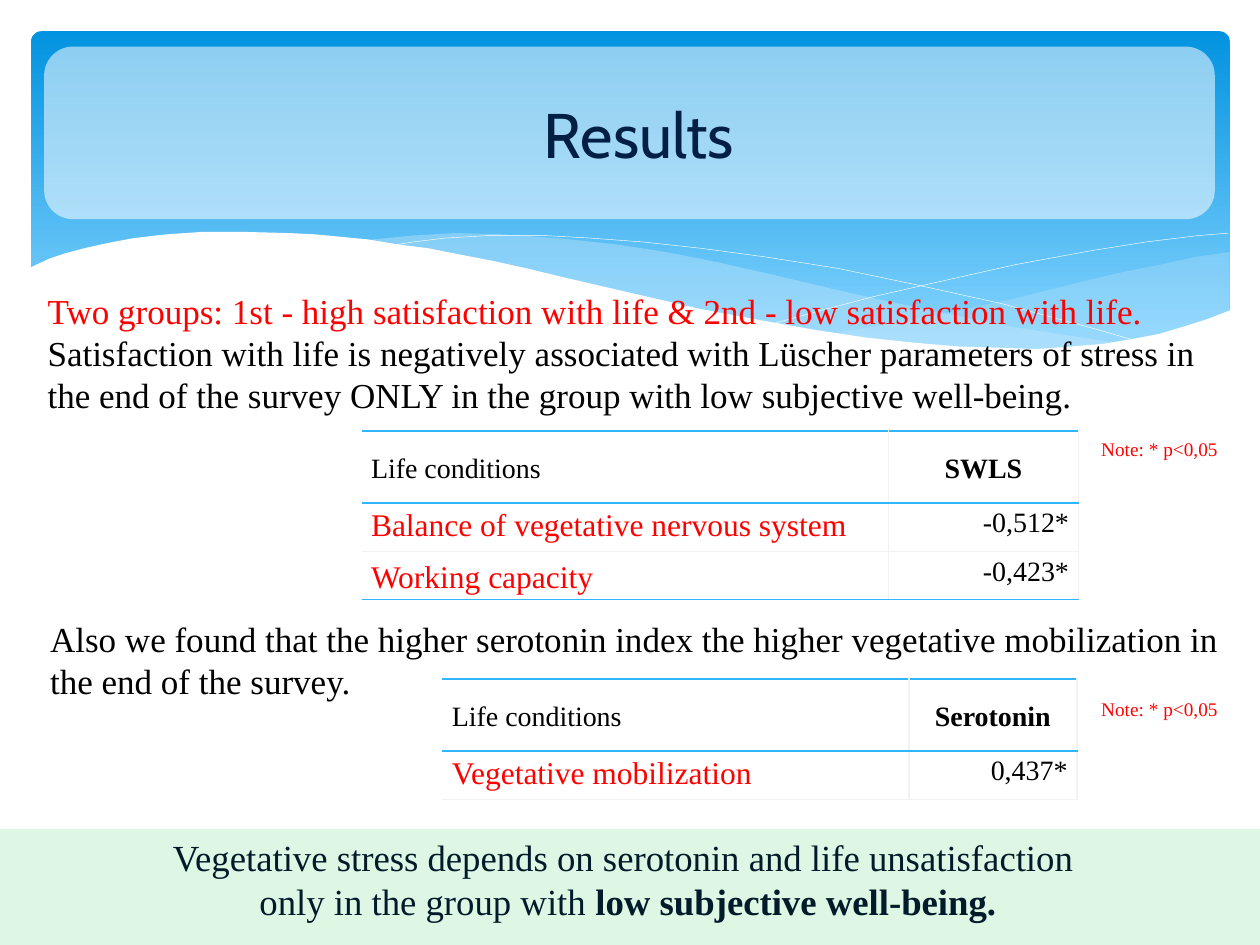
from lxml import etree
from pptx import Presentation
from pptx.dml.color import RGBColor
from pptx.enum import shapes, text
from pptx.oxml import ns
from pptx.util import Cm, Pt

WHITE = RGBColor(0xFF, 0xFF, 0xFF)
BLACK = RGBColor(0x00, 0x00, 0x00)
RED = RGBColor(0xFF, 0x00, 0x00)
NAVY = RGBColor(0x04, 0x1F, 0x44)
INK = RGBColor(0x02, 0x1B, 0x2B)
SKY = RGBColor(0x02, 0x93, 0xE0)
PALE_SKY = RGBColor(0x83, 0xD3, 0xFE)
MIST = RGBColor(0xC6, 0xE7, 0xFC)
MINT = RGBColor(0xDE, 0xF6, 0xE4)
BLUE = RGBColor(0x31, 0xB6, 0xFD)
GREY = RGBColor(0xF2, 0xF2, 0xF2)
SERIF = "Times New Roman"
LEFT, CENTER = text.PP_ALIGN.LEFT, text.PP_ALIGN.CENTER
RIGHT, JUSTIFY = text.PP_ALIGN.RIGHT, text.PP_ALIGN.JUSTIFY
MIDDLE, TOP = text.MSO_ANCHOR.MIDDLE, text.MSO_ANCHOR.TOP


def write(p, content, size=20, color=BLACK, bold=False, font=SERIF, align=LEFT):
    """Append content to a paragraph; a newline becomes a line break."""
    p.alignment = align
    for i, line in enumerate(content.split("\n")):
        if i:
            p.add_line_break()
        r = p.add_run()
        r.text = line
        r.font.size, r.font.bold, r.font.name = Pt(size), bold, font
        r.font.color.rgb = color


def paint(sp, color, opacity=100):
    """Solid fill with an opacity in percent, no outline, no shadow."""
    sp.shadow.inherit = False
    sp.line.fill.background()
    sp.fill.solid()
    sp.fill.fore_color.rgb = color
    if opacity < 100:
        clr = sp.fill._xPr.find(".//" + ns.qn("a:srgbClr"))
        etree.SubElement(clr, ns.qn("a:alpha"), val=str(opacity * 1000))


prs = Presentation()
prs.slide_width, prs.slide_height = Cm(25.4), Cm(19.05)
s = prs.slides.add_slide(prs.slide_layouts[6])

# Blue header with a gradient
sp = s.shapes.add_shape(shapes.MSO_SHAPE.ROUNDED_RECTANGLE,
                        Cm(0.63), Cm(0.63), Cm(24.16), Cm(6.86))
sp.adjustments[0] = 0.03
paint(sp, SKY)
sp.fill.gradient()
sp.fill.gradient_angle = 270
for stop, color, position in zip(sp.fill.gradient_stops, (SKY, PALE_SKY), (0, 0.9)):
    stop.color.rgb, stop.position = color, position

# Waves: fill, opacity (None for an open white line), points in 1/100 of an inch
waves = [
    (MIST, 29, [(976, 200), (948, 204), (921, 210), (891, 216), (861, 223), (805, 237),
                (753, 248), (706, 257), (661, 265), (691, 269), (719, 272), (757, 276),
                (792, 277), (835, 277), (872, 274), (905, 269), (935, 262), (963, 252),
                (976, 247)]),
    (MIST, 40, [(893, 273), (866, 269), (807, 260), (741, 247), (668, 231), (613, 218),
                (569, 208), (528, 200), (489, 194), (442, 189), (399, 186), (361, 185),
                (328, 187), (286, 191), (323, 196), (362, 203), (404, 211), (449, 222),
                (530, 240), (601, 255), (650, 264), (695, 270), (736, 275), (785, 278),
                (838, 278), (876, 275)]),
    (None, 0, [(309, 195), (328, 192), (353, 189), (387, 187), (433, 187), (469, 189),
               (510, 192), (556, 197), (608, 204), (665, 213), (727, 226), (795, 241),
               (869, 261), (907, 272)]),
    (None, 0, [(613, 257), (653, 246), (695, 235), (748, 223), (806, 210), (866, 199),
               (910, 192), (951, 187), (975, 185)]),
    (WHITE, 100, [(977, 246), (959, 253), (940, 259), (920, 265), (899, 269), (875, 273),
                  (850, 275), (823, 277), (793, 276), (761, 275), (726, 272), (688, 268),
                  (648, 262), (603, 254), (555, 245), (503, 233), (447, 220), (418, 213),
                  (391, 207), (365, 202), (340, 197), (316, 194), (292, 190), (271, 188),
                  (250, 186), (230, 185), (193, 184), (161, 184), (132, 186), (106, 189),
                  (85, 193), (67, 197), (52, 201), (40, 205), (29, 210), (23, 213),
                  (23, 329), (977, 329)]),
]
for color, opacity, points in waves:
    fb = s.shapes.build_freeform(*points[0], scale=Cm(2.54) / 100)
    fb.add_line_segments(points[1:], close=color is not None)
    sp = fb.convert_to_shape()
    paint(sp, color or WHITE, opacity)
    if color is None:
        sp.fill.background()
        sp.line.color.rgb, sp.line.width = WHITE, Pt(0.25)

band = s.shapes.add_shape(shapes.MSO_SHAPE.RECTANGLE, 0, Cm(16.71), Cm(25.4), Cm(2.34))
paint(band, MINT)
panel = s.shapes.add_shape(shapes.MSO_SHAPE.ROUNDED_RECTANGLE,
                           Cm(0.89), Cm(0.94), Cm(23.6), Cm(3.48))
paint(panel, WHITE, 54)

# Text boxes: left, top, width, height, anchor, paragraphs of formatted runs
note = [[("Note: * p<0,05", dict(size=11, color=RED))]]
closing = dict(size=21, color=INK, align=CENTER)
boxes = [
    (0.51, 0.94, 24.46, 3.48, MIDDLE,
     [[(" Results", dict(size=36, color=NAVY, font="Cabin", align=CENTER))]]),
    (0.71, 5.72, 24.49, 2.82, TOP,
     [[("Two groups: 1st - high satisfaction with life & 2nd - low satisfaction with life.",
        dict(color=RED))],
      [("Satisfaction with life is negatively associated with Lüscher parameters of stress "
        "in the end of the survey ONLY in the group with low subjective well-being.", {})]]),
    (21.95, 8.69, 4.85, 0.74, TOP, note),
    (0.76, 12.32, 24.49, 1.96, TOP,
     [[("Also we found that the higher serotonin index the higher vegetative mobilization "
        "in the end of the survey.", {})]]),
    (21.95, 13.94, 4.85, 0.74, TOP, note),
    (0, 16.71, 25.32, 2.06, TOP,
     [[("Vegetative stress depends on serotonin and life unsatisfaction \n"
        "only in the group with ", closing),
       ("low subjective well-being.", dict(closing, bold=True))]]),
]
for left, top, width, height, anchor, paragraphs in boxes:
    tf = s.shapes.add_textbox(Cm(left), Cm(top), Cm(width), Cm(height)).text_frame
    tf.word_wrap, tf.vertical_anchor = True, anchor
    for i, runs in enumerate(paragraphs):
        p = tf.add_paragraph() if i else tf.paragraphs[0]
        for content, style in runs:
            write(p, content, **style)

# Tables: left, top, column widths, row heights, bottom border, rows
tables = [
    (7.29, 8.69, (10.62, 3.83), (1.45, 0.98, 0.97), BLUE,
     [("Life conditions", "SWLS"),
      ("Balance of vegetative nervous system", "-0,512*"),
      ("Working capacity", "-0,423*")]),
    (8.92, 13.69, (9.4, 3.39), (1.45, 0.98), GREY,
     [("Life conditions", "Serotonin"),
      ("Vegetative mobilization", "0,437*")]),
]
for left, top, widths, heights, bottom, rows in tables:
    tbl = s.shapes.add_table(len(rows), 2, Cm(left), Cm(top),
                             Cm(sum(widths)), Cm(sum(heights))).table
    tbl.first_row = tbl.horz_banding = False
    for column, width in zip(tbl.columns, widths):
        column.width = Cm(width)
    rules = [BLUE, BLUE] + [GREY] * (len(rows) - 2) + [bottom]
    for i, row in enumerate(rows):
        tbl.rows[i].height = Cm(heights[i])
        for j, content in enumerate(row):
            cell = tbl.cell(i, j)
            cell.margin_left = cell.margin_right = Cm(0.19)
            cell.margin_top = cell.margin_bottom = 0
            cell.vertical_anchor = MIDDLE if i == 0 or (i == 2 and j == 0) else TOP
            borders = {"lnL": GREY if j else None, "lnR": GREY,
                       "lnT": rules[i], "lnB": rules[i + 1]}
            for tag, color in borders.items():
                ln = etree.SubElement(cell._tc.get_or_add_tcPr(), ns.qn("a:" + tag),
                                      w=str(Pt(1)))
                if color is None:
                    etree.SubElement(ln, ns.qn("a:noFill"))
                else:
                    fill = etree.SubElement(ln, ns.qn("a:solidFill"))
                    etree.SubElement(fill, ns.qn("a:srgbClr"), val=str(color))
            if i:
                cell.fill.solid()
                cell.fill.fore_color.rgb = WHITE
            else:
                cell.fill.background()
            p = cell.text_frame.paragraphs[0]
            p.line_spacing, p.space_after = 1.15, Pt(10)
            is_label = i > 0 and j == 0
            write(p, content, size=18 if is_label else 16, color=RED if is_label else BLACK,
                  bold=i == 0 and j == 1,
                  align=JUSTIFY if j == 0 else RIGHT if i else CENTER)

prs.save("out.pptx")
